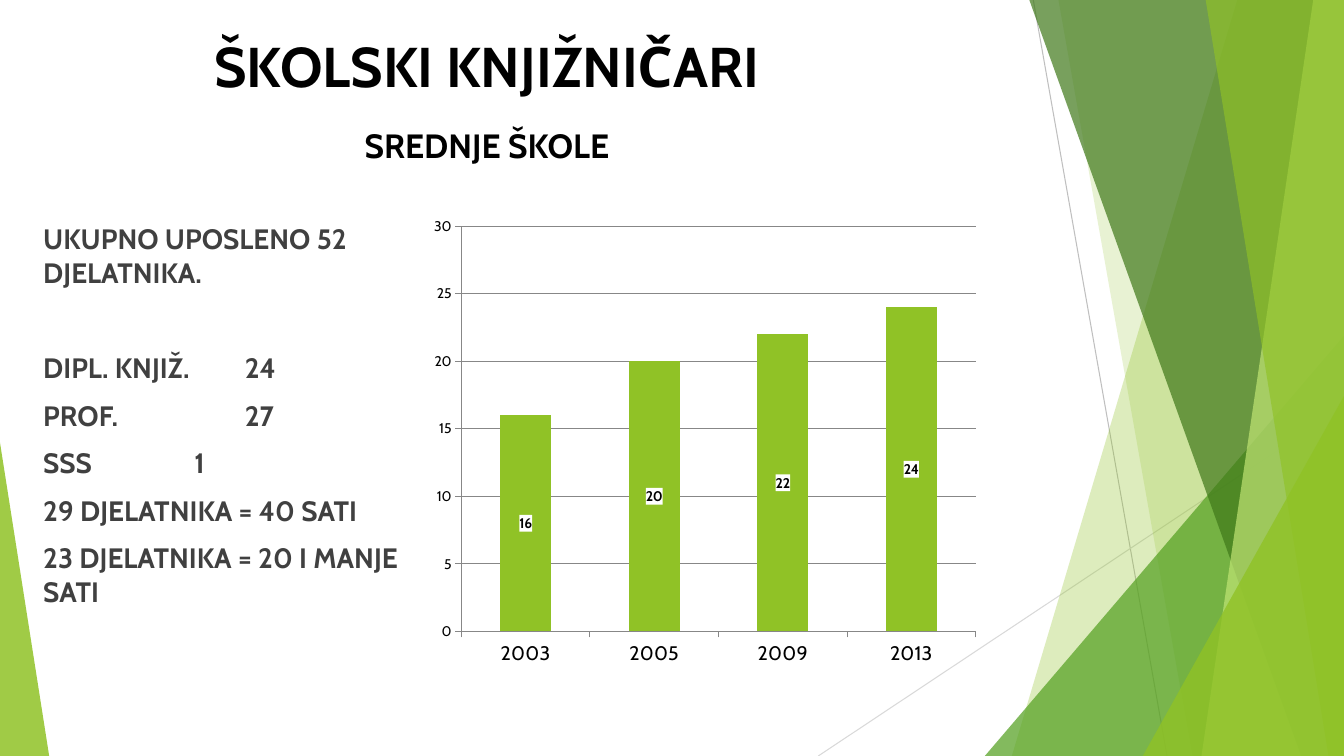
from lxml.etree import SubElement
from pptx import Presentation
from pptx.chart.data import CategoryChartData
from pptx.dml.color import RGBColor
from pptx.enum.chart import XL_CHART_TYPE as ChartType, XL_LABEL_POSITION as LabelPosition
from pptx.enum.chart import XL_TICK_MARK as TickMark
from pptx.enum.shapes import MSO_CONNECTOR as Connector, MSO_SHAPE as Shape
from pptx.enum.text import MSO_ANCHOR as Anchor, PP_ALIGN as Align
from pptx.oxml import parse_xml
from pptx.oxml.ns import nsdecls, qn
from pptx.util import Cm, Pt

BLACK = RGBColor(0x00, 0x00, 0x00)
BODY_GREY = RGBColor(0x40, 0x40, 0x40)
AXIS_GREY = RGBColor(0x87, 0x87, 0x87)
LINE_GREY = RGBColor(0xBF, 0xBF, 0xBF)
PALE_GREY = RGBColor(0xD9, 0xD9, 0xD9)
LIME = RGBColor(0x90, 0xC2, 0x26)
PALE_LIME = RGBColor(0xC0, 0xE4, 0x74)
GREEN = RGBColor(0x54, 0xA0, 0x21)
DARK_GREEN = RGBColor(0x3F, 0x78, 0x19)

WIDTH, HEIGHT = 33.87, 19.05


class SlideBuilder:
    """Draws styled elements on one slide."""

    font = "Cabin"

    def __init__(self, page):
        self.page = page

    def paint(self, shape, color, opacity):
        shape.shadow.inherit = False
        shape.fill.solid()
        shape.fill.fore_color.rgb = color
        shape.line.fill.background()
        tint = shape.fill._xPr.find(qn("a:solidFill"))[0]
        SubElement(tint, qn("a:alpha")).set("val", str(opacity * 1000))

    def panel(self, top_x, bottom_x, color, opacity):
        top = Cm(-0.03)
        outline = self.page.shapes.build_freeform(Cm(top_x), top)
        outline.add_line_segments([
            (Cm(WIDTH), top), (Cm(WIDTH), Cm(HEIGHT)), (Cm(bottom_x), Cm(HEIGHT))])
        self.paint(outline.convert_to_shape(), color, opacity)

    def triangle(self, left, top, width, apex, color, opacity):
        shape = self.page.shapes.add_shape(
            Shape.ISOSCELES_TRIANGLE, Cm(left), Cm(top), Cm(width), Cm(HEIGHT - top))
        shape.adjustments[0] = apex
        self.paint(shape, color, opacity)

    def line(self, x1, y1, x2, y2, color):
        line = self.page.shapes.add_connector(
            Connector.STRAIGHT, Cm(x1), Cm(y1), Cm(x2), Cm(y2))
        line.line.color.rgb = color
        line.line.width = Pt(0.75)
        SubElement(line._element.spPr, qn("a:effectLst"))

    def text_frame(self, left, top, width, height, anchor=Anchor.TOP):
        box = self.page.shapes.add_textbox(Cm(left), Cm(top), Cm(width), Cm(height))
        frame = box.text_frame
        frame.word_wrap = True
        frame.vertical_anchor = anchor
        return frame

    def paragraph(self, frame, text, size, color, align=Align.LEFT, before=0, tab=None):
        para = frame.paragraphs[0]
        if para.runs:
            para = frame.add_paragraph()
        para.alignment = align
        para.space_before = Pt(before)
        if tab:
            stops = SubElement(para._p.get_or_add_pPr(), qn("a:tabLst"))
            SubElement(stops, qn("a:tab"), pos=str(Cm(tab)), algn="l")
        span = para.add_run()
        span.text = text
        self.style(span.font, size, color, True)
        return para

    def style(self, font, size, color, bold=False):
        font.name = self.font
        font.size = Pt(size)
        font.bold = bold
        font.color.rgb = color

    def axis(self, axis, size):
        axis.major_tick_mark = TickMark.OUTSIDE
        axis.minor_tick_mark = TickMark.NONE
        axis.format.line.color.rgb = AXIS_GREY
        self.style(axis.tick_labels.font, size, BLACK)

    def column_chart(self, left, top, width, height, values, plot_area):
        data = CategoryChartData(number_format="General")
        data.categories = list(values)
        data.add_series("Series 1", values.values())
        chart = self.page.shapes.add_chart(
            ChartType.COLUMN_STACKED, Cm(left), Cm(top), Cm(width), Cm(height), data).chart
        chart.has_legend = False
        chart.has_title = False
        self.style(chart.font, 10, BLACK)
        self.axis(chart.category_axis, 14)
        scale = chart.value_axis
        self.axis(scale, 10)
        scale.minimum_scale, scale.maximum_scale, scale.major_unit = 0, 30, 5
        scale.tick_labels.number_format = "#,##0"
        scale.tick_labels.number_format_is_linked = False
        scale.has_major_gridlines = True
        scale.major_gridlines.format.line.color.rgb = AXIS_GREY
        plot = chart.plots[0]
        plot.gap_width = 150
        plot.overlap = 100
        plot.vary_by_categories = False
        series = plot.series[0]
        series.format.fill.solid()
        series.format.fill.fore_color.rgb = LIME
        labels = series.data_labels
        labels.show_value = True
        labels.position = LabelPosition.CENTER
        self.style(labels.font, 10, BLACK, True)
        labels._element.find(qn("c:txPr")).addprevious(parse_xml(
            f'<c:spPr {nsdecls("c", "a")}><a:solidFill><a:srgbClr val="FFFFFF"/>'
            '</a:solidFill></c:spPr>'))
        self.place_plot(chart, plot_area)

    def place_plot(self, chart, plot_area):
        area = chart._chartSpace.chart.plotArea
        for old in area.findall(qn("c:layout")):
            area.remove(old)
        layout = parse_xml(f'<c:layout {nsdecls("c")}><c:manualLayout/></c:layout>')
        settings = [("layoutTarget", "inner"), ("xMode", "edge"), ("yMode", "edge")]
        for name, value in settings + list(zip("xywh", plot_area)):
            SubElement(layout[0], qn(f"c:{name}")).set("val", str(value))
        area.insert(0, layout)


def main():
    deck = Presentation()
    deck.slide_width, deck.slide_height = Cm(WIDTH), Cm(HEIGHT)
    slide = SlideBuilder(deck.slides.add_slide(deck.slide_layouts[6]))

    slide.line(26.04, 0, 29.41, HEIGHT, LINE_GREY)
    slide.line(WIDTH, 10.24, 20.62, HEIGHT, PALE_GREY)
    slide.panel(31.19, 25.5, LIME, 30)
    slide.panel(26.67, 30.05, LIME, 20)
    slide.triangle(24.82, 8.46, 9.05, 1, GREEN, 72)
    slide.panel(25.93, 32.79, DARK_GREEN, 70)
    slide.panel(33.1, 30.28, PALE_LIME, 70)
    slide.panel(30.38, 33.48, LIME, 65)
    slide.triangle(28.8, 9.98, 5.07, 1, LIME, 80)
    slide.triangle(0, 11.15, 1.24, 0, LIME, 85)

    title = slide.text_frame(2.59, 0.41, 24.41, 3.89, Anchor.BOTTOM)
    title.margin_right = Cm(5.3)
    slide.paragraph(title, "ŠKOLSKI KNJIŽNIČARI", 40, BLACK, Align.CENTER)
    subtitle = slide.paragraph(title, "SREDNJE ŠKOLE", 24, BLACK, Align.CENTER)
    subtitle.line_spacing = Pt(48)

    slide.column_chart(10.85, 3.33, 14.12, 13.69,
                       {"2003": 16, "2005": 20, "2009": 22, "2013": 24},
                       (0.055, 0.173, 0.918, 0.746))

    body = slide.text_frame(0.84, 5.46, 9.47, 11.4)
    for text, before, tab in (
            ("UKUPNO UPOSLENO 52 DJELATNIKA.", 10, None),
            ("DIPL. KNJIŽ.\t24", 44, 5.08),
            ("PROF.\t27", 10, 5.08),
            ("SSS\t1", 10, 3.81),
            ("29 DJELATNIKA = 40 SATI", 10, None),
            ("23 DJELATNIKA = 20 I MANJE SATI", 10, None)):
        slide.paragraph(body, text, 20, BODY_GREY, before=before, tab=tab)

    deck.save("out.pptx")


if __name__ == "__main__":
    main()
